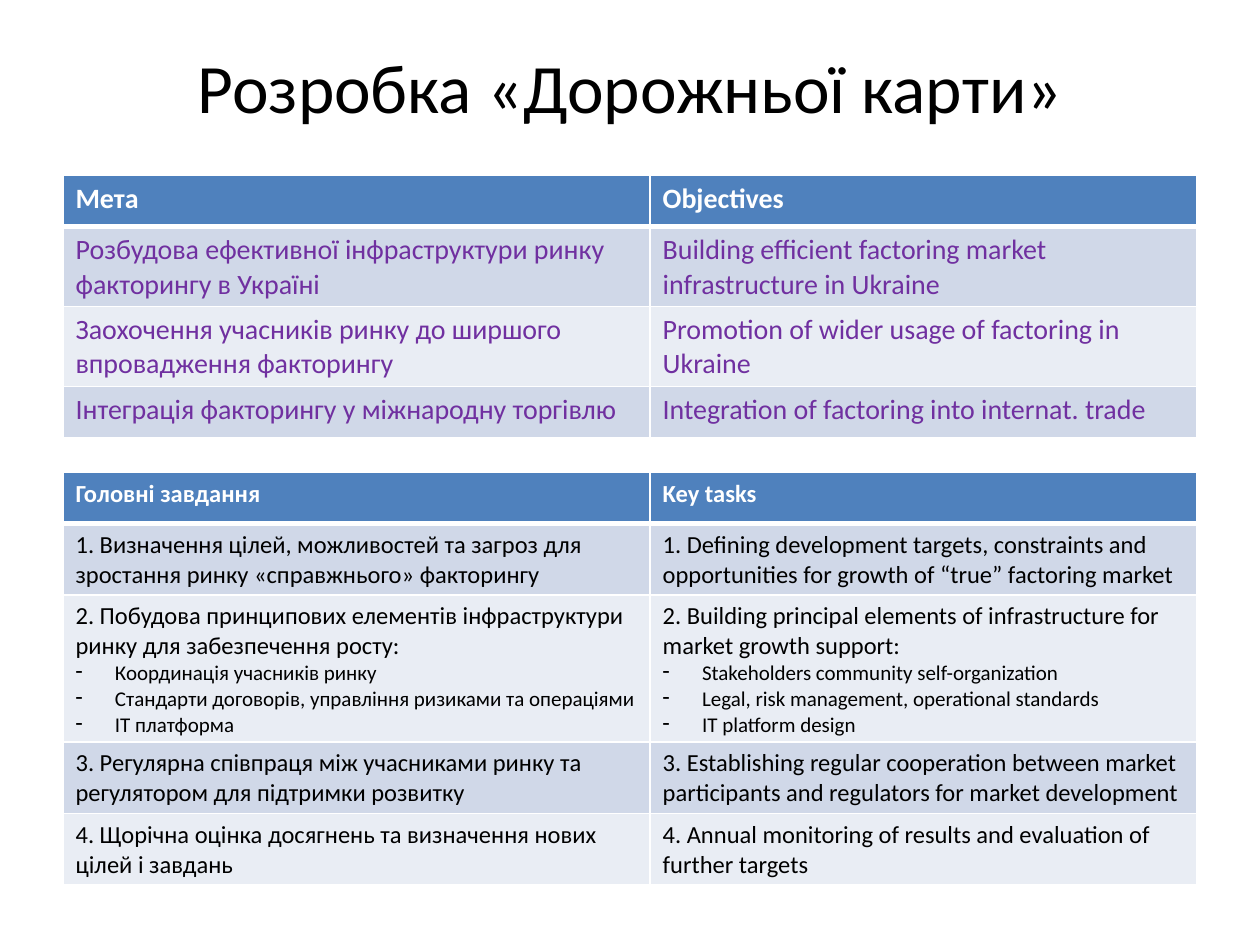
from lxml import etree
from pptx import Presentation
from pptx.dml.color import RGBColor
from pptx.enum.text import MSO_ANCHOR, PP_ALIGN
from pptx.oxml.ns import qn
from pptx.util import Pt

CENTER = PP_ALIGN.CENTER
MIDDLE = MSO_ANCHOR.MIDDLE
WHITE = RGBColor(0xFF, 0xFF, 0xFF)
BLACK = RGBColor(0, 0, 0)
BLUE = RGBColor(0x4F, 0x81, 0xBD)
PURPLE = RGBColor(0x70, 0x30, 0xA0)
BANDS = (RGBColor(0xD0, 0xD8, 0xE8), RGBColor(0xE9, 0xED, 0xF4))
FONT = "Calibri"
COLUMN_WIDTHS = (335.5, 312.5)
ROW_HEIGHT = 29.2
BULLET_INDENT = 22.5
BULLET_SIZE = 12

OBJECTIVES = [
    ("Мета", "Objectives"),
    ("Розбудова ефективної інфраструктури ринку факторингу в Україні",
     "Building efficient factoring market infrastructure in Ukraine"),
    ("Заохочення учасників ринку до ширшого впровадження факторингу",
     "Promotion of wider usage of factoring in Ukraine"),
    ("Інтеграція факторингу у міжнародну торгівлю",
     "Integration of factoring into internat. trade"),
]
TASKS = [
    ("Головні завдання", "Key tasks"),
    ("1. Визначення цілей, можливостей та загроз для зростання ринку «справжнього» факторингу",
     "1. Defining development targets, constraints and opportunities "
     "for growth of “true” factoring market"),
    (("2. Побудова принципових елементів інфраструктури ринку для забезпечення росту:",
      "Координація учасників ринку",
      "Стандарти договорів, управління ризиками та операціями",
      "ІТ платформа"),
     ("2. Building principal elements of infrastructure for market growth support:",
      "Stakeholders community self-organization",
      "Legal, risk management, operational standards",
      "IT platform design")),
    ("3. Регулярна співпраця між учасниками ринку та регулятором для підтримки розвитку",
     "3. Establishing regular cooperation between market participants "
     "and regulators for market development"),
    ("4. Щорічна оцінка досягнень та визначення нових цілей і завдань",
     "4. Annual monitoring of results and evaluation of further targets"),
]


def set_font(para, size, color, bold=False):
    """Set the font of a whole paragraph."""
    font = para.font
    font.name, font.size, font.bold = FONT, Pt(size), bold
    font.color.rgb = color


def set_borders(cell, top, bottom):
    """Give a cell white borders; top and bottom are line widths."""
    properties = cell._tc.get_or_add_tcPr()
    sides = (("lnL", 1), ("lnR", 1), ("lnT", top), ("lnB", bottom))
    for index, (side, width) in enumerate(sides):
        line = etree.Element(qn(f"a:{side}"), w=str(Pt(width)))
        fill = etree.SubElement(line, qn("a:solidFill"))
        etree.SubElement(fill, qn("a:srgbClr"), val=str(WHITE))
        properties.insert(index, line)


def add_dash(para):
    """Turn a paragraph into a dashed item with a hanging indent."""
    properties = para._p.get_or_add_pPr()
    properties.set("marL", str(Pt(BULLET_INDENT)))
    properties.set("indent", str(-Pt(BULLET_INDENT)))
    bullet = etree.Element(qn("a:buChar"), char="-")
    properties.insert(0, bullet)


def fill_cell(cell, content, size, color, bold):
    """Write a lead paragraph and any dashed items below it."""
    lines = (content,) if isinstance(content, str) else content
    frame = cell.text_frame
    for index, text in enumerate(lines):
        para = frame.add_paragraph() if index else frame.paragraphs[0]
        para.text = text
        set_font(para, BULLET_SIZE if index else size, color, bold)
        if index:
            add_dash(para)


def add_title(page, left, top, width, height):
    """Place the centred slide title."""
    box = page.shapes.add_textbox(Pt(left), Pt(top), Pt(width), Pt(height))
    frame = box.text_frame
    frame.word_wrap = True
    frame.vertical_anchor = MIDDLE
    para = frame.paragraphs[0]
    para.text = "Розробка «Дорожньої карти»"
    para.alignment = CENTER
    set_font(para, 39.6, BLACK)


def add_bilingual_table(page, left, top, rows, size, color):
    """Place a banded table with a blue header row."""
    table = page.shapes.add_table(
        len(rows), len(COLUMN_WIDTHS), Pt(left), Pt(top),
        Pt(sum(COLUMN_WIDTHS)), Pt(ROW_HEIGHT * len(rows))).table
    for column, width in zip(table.columns, COLUMN_WIDTHS):
        column.width = Pt(width)
    for row_index, row in enumerate(rows):
        table.rows[row_index].height = Pt(ROW_HEIGHT)
        header = row_index == 0
        for column_index, content in enumerate(row):
            cell = table.cell(row_index, column_index)
            cell.fill.solid()
            cell.fill.fore_color.rgb = BLUE if header else BANDS[(row_index - 1) % 2]
            set_borders(cell, 3 if row_index == 1 else 1, 3 if header else 1)
            fill_cell(cell, content, size, WHITE if header else color, header)


def main():
    """Build and save the slide."""
    deck = Presentation()
    deck.slide_width, deck.slide_height = Pt(720), Pt(540)
    page = deck.slides.add_slide(deck.slide_layouts[6])
    add_title(page, 36, 21.6, 648, 55.4)
    add_bilingual_table(page, 36, 100.4, OBJECTIVES, 16, PURPLE)
    add_bilingual_table(page, 36, 270, TASKS, 14, BLACK)
    deck.save("out.pptx")


if __name__ == "__main__":
    main()
